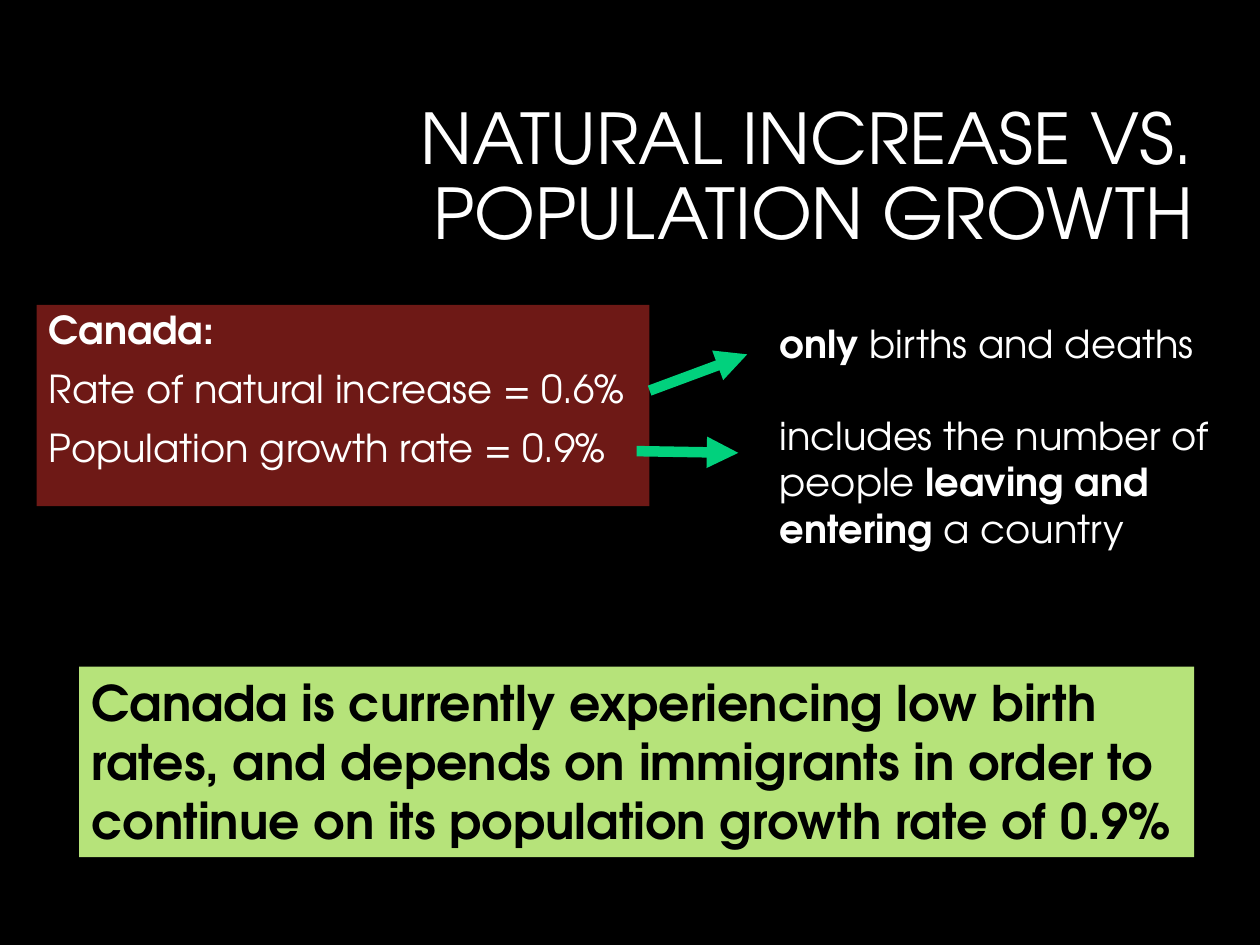
from lxml import etree
from pptx import Presentation
from pptx.dml.color import RGBColor
from pptx.enum.shapes import MSO_CONNECTOR, MSO_SHAPE
from pptx.enum.text import MSO_ANCHOR, PP_ALIGN
from pptx.oxml.ns import qn
from pptx.util import Pt

STRAIGHT = MSO_CONNECTOR.STRAIGHT
RECT = MSO_SHAPE.RECTANGLE
TOP, MIDDLE = MSO_ANCHOR.TOP, MSO_ANCHOR.MIDDLE
LEFT, RIGHT = PP_ALIGN.LEFT, PP_ALIGN.RIGHT
FONT = "TeX Gyre Adventor"
WHITE, BLACK = "FFFFFF", "000000"


def paint(color, value):
    """Set a color format from a hex string."""
    color.rgb = RGBColor.from_string(value)


def panel(slide, box, fill=None):
    """Add a text box, or a filled rectangle when a fill is given."""
    place = [Pt(n) for n in box]
    if not fill:
        return slide.shapes.add_textbox(*place)
    shape = slide.shapes.add_shape(RECT, *place)
    shape.shadow.inherit = False
    shape.fill.solid()
    paint(shape.fill.fore_color, fill)
    shape.line.fill.background()
    return shape


def write(shape, paras, size, color=WHITE, align=LEFT, anchor=TOP, gap=0, lead=1.0):
    """Fill a shape with paragraphs, each a list of (text, bold) runs."""
    frame = shape.text_frame
    frame.word_wrap = True
    frame.vertical_anchor = anchor
    for i, runs in enumerate(paras):
        para = frame.add_paragraph() if i else frame.paragraphs[0]
        para.alignment = align
        para.line_spacing = lead
        para.space_before = Pt(gap if i else 0)
        para.font.name, para.font.size = FONT, Pt(size)
        paint(para.font.color, color)
        for text, bold in runs:
            run = para.add_run()
            run.text, run.font.bold = text, bold


def title(slide, box):
    """Place the slide title."""
    text = "NATURAL INCREASE VS. POPULATION GROWTH"
    write(panel(slide, box), [[(text, False)]], 40, align=RIGHT, anchor=MIDDLE, lead=0.9)


def rates(slide, box):
    """Place the red panel with the two rates."""
    paras = [
        [("Canada:", True)],
        [("Rate of natural increase = 0.6%", False)],
        [("Population growth rate = 0.9%", False)],
    ]
    write(panel(slide, box, "6E1916"), paras, 22, gap=10, lead=0.9)


def notes(slide, box):
    """Place the explanations of the two rates."""
    paras = [
        [("only ", True), ("births and deaths", False)],
        [("includes the number of people ", False),
         ("leaving and entering ", True), ("a country", False)],
    ]
    write(panel(slide, box), paras, 22, gap=26.3)


def result(slide, box):
    """Place the green conclusion panel."""
    text = ("Canada is currently experiencing low birth rates, and depends on "
            "immigrants in order to continue on its population growth rate of 0.9%")
    write(panel(slide, box, "B6E37A"), [[(text, True)]], 28, BLACK)


def arrow(slide, start, end):
    """Draw a thick green arrow between two points."""
    line = slide.shapes.add_connector(STRAIGHT, *[Pt(n) for n in start + end])
    line.line.width = Pt(6)
    paint(line.line.color, "01D17D")
    props = line.line._get_or_add_ln()
    etree.SubElement(props, qn("a:tailEnd"), type="triangle")
    etree.SubElement(props.getparent(), qn("a:effectLst"))


def main():
    """Build and save the slide."""
    deck = Presentation()
    deck.slide_width, deck.slide_height = Pt(720), Pt(540)
    slide = deck.slides.add_slide(deck.slide_layouts[6])
    slide.background.fill.solid()
    paint(slide.background.fill.fore_color, BLACK)
    title(slide, (187.2, 51.8, 501.8, 101.5))
    rates(slide, (20.9, 174.2, 350.2, 115))
    result(slide, (45.2, 381, 637.2, 108.8))
    notes(slide, (438.5, 179.3, 305.3, 167))
    arrow(slide, (371.2, 223.2), (427, 202.5))
    arrow(slide, (363.8, 257.8), (421.9, 258.8))
    deck.save("out.pptx")


if __name__ == "__main__":
    main()
